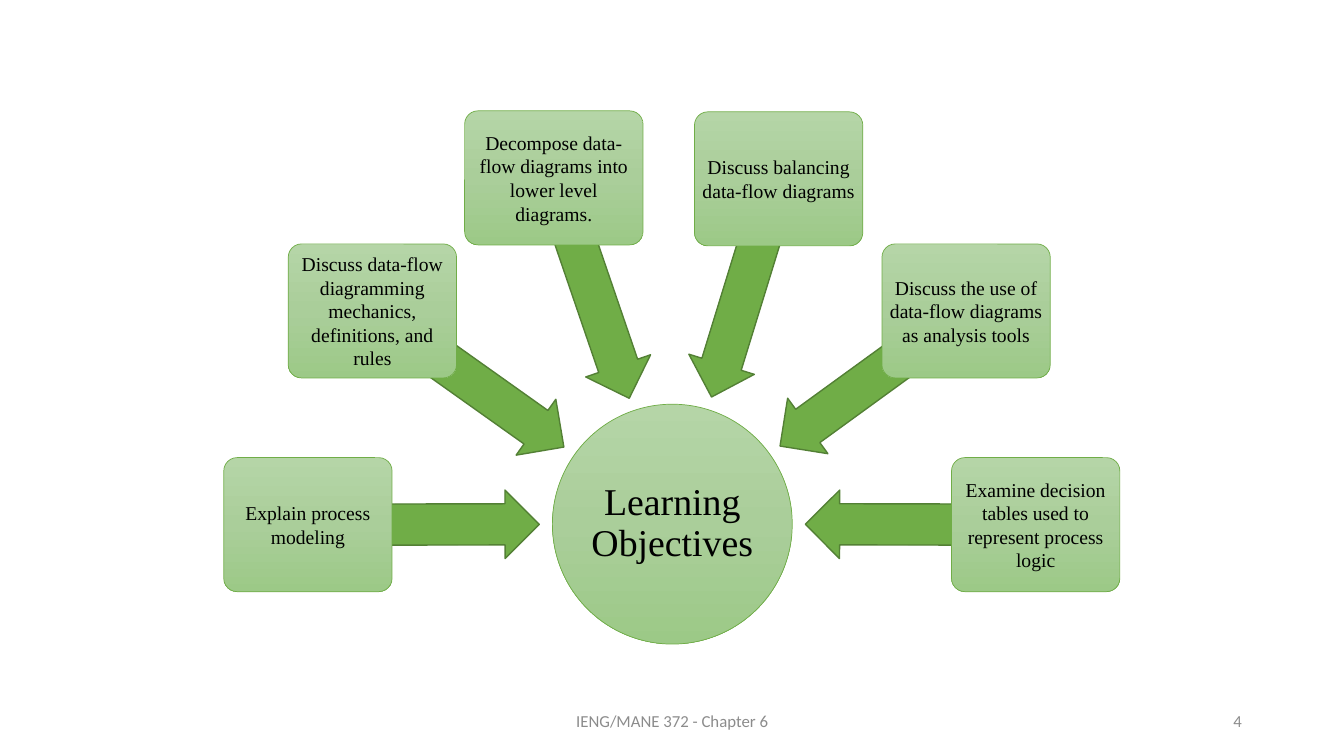
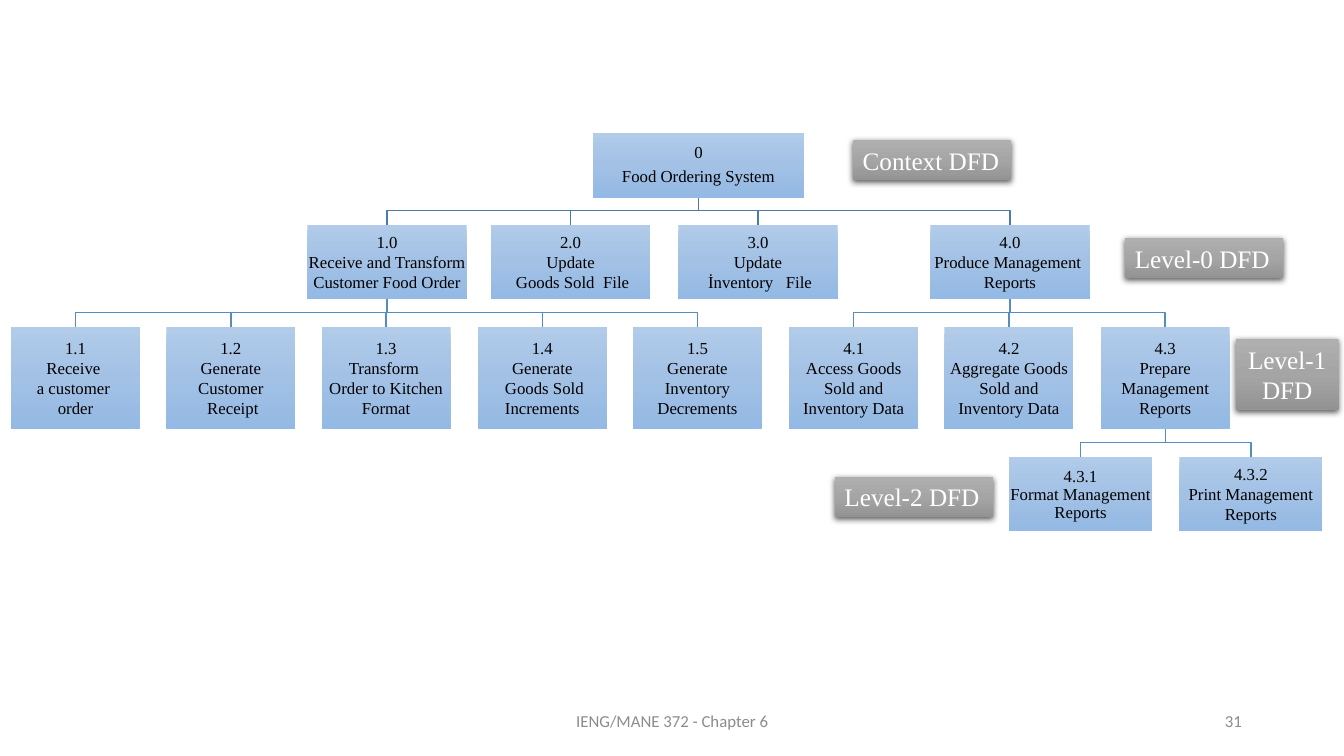
from copy import deepcopy
from dataclasses import dataclass
from math import atan2, degrees, hypot

from lxml import etree
from pptx import Presentation
from pptx import util as u
from pptx.dml.color import RGBColor
from pptx.enum import shapes, text
from pptx.oxml.ns import qn

# Shared scale, fonts and colours
PX = 9144  # EMU per px, 100 px to the inch
SERIF, SANS = "Times New Roman", "Calibri"
BLACK, WHITE, FOOTER_GREY = "000000", "FFFFFF", "8C8C8C"
GREEN, DARK_GREEN = "70AD47", "538035"
GREEN_FADE = ("B5D5A7", "AACE9A", "9CC987")
BLUE_FADE = ("B1CBE9", "A3C1E5", "93B9E4")
GREY_FADE = ("AFAFAF", "A5A5A5", "939393")
LEFT, CENTER, RIGHT = text.PP_ALIGN.LEFT, text.PP_ALIGN.CENTER, text.PP_ALIGN.RIGHT
SHAPE = shapes.MSO_SHAPE


@dataclass
class Box:
    x: int
    y: int
    w: int
    h: int
    lines: str

    @property
    def center(self) -> tuple[float, float]:
        return self.x + self.w / 2, self.y + self.h / 2


@dataclass
class Node:
    x: int
    w: int
    level: int
    parent: str
    lines: str

    @property
    def mid(self) -> int:
        return self.x + self.w // 2

    @property
    def number(self) -> str:
        return self.lines.split("\n")[0]


# Drawing helpers
def px(n: float) -> u.Emu:
    return u.Emu(round(n * PX))


def color(value: str) -> RGBColor:
    return RGBColor.from_string(value)


def write(sp, lines: str, size: int, hue: str = BLACK, font: str = SERIF,
          align=CENTER, inset: int = 0) -> None:
    tf = sp.text_frame
    tf.text = lines
    tf.word_wrap = True
    tf.vertical_anchor = text.MSO_ANCHOR.MIDDLE
    tf.margin_left = tf.margin_right = tf.margin_top = tf.margin_bottom = px(inset)
    for p in tf.paragraphs:
        p.alignment = align
        for r in p.runs:
            r.font.size, r.font.name = u.Pt(size), font
            r.font.color.rgb = color(hue)


def fade(sp, hues: tuple[str, ...]) -> None:
    """Fill from top to bottom with three evenly spaced colours."""
    sp.fill.gradient()
    sp.fill.gradient_angle = 270
    stops = sp._element.spPr.find(qn("a:gradFill")).find(qn("a:gsLst"))
    stops.insert(1, deepcopy(stops[0]))
    for i, (stop, hue) in enumerate(zip(sp.fill.gradient_stops, hues)):
        stop.position = i / 2
        stop.color.rgb = color(hue)


def outline(sp, hue: str, width: float) -> None:
    sp.line.color.rgb = color(hue)
    sp.line.width = u.Pt(width)


def add_box(s, kind, box: Box, hues: tuple[str, ...], size: int,
            hue: str = BLACK, align=CENTER, inset: int = 1):
    sp = s.shapes.add_shape(kind, px(box.x), px(box.y), px(box.w), px(box.h))
    sp.shadow.inherit = False
    fade(sp, hues)
    sp.line.fill.background()
    write(sp, box.lines, size, hue, align=align, inset=inset)
    return sp


def add_slide(prs, number: int):
    s = prs.slides.add_slide(prs.slide_layouts[6])
    for x, w, label, align in ((442, 450, "IENG/MANE 372 - Chapter 6", CENTER),
                               (942, 300, str(number), RIGHT)):
        sp = s.shapes.add_textbox(px(x), px(695), px(w), px(40))
        write(sp, label, 12, FOOTER_GREY, SANS, align, inset=10)
    return s


# Learning objectives: boxes whose arrows point at the hub
HUB = Box(548, 401, 238, 238, "Learning Objectives")
ARROW_H, ARROW_GAP = 68, 13
OBJECTIVES = (
    Box(222, 454, 167, 133, "Explain process modeling"),
    Box(286, 242, 167, 133,
        "Discuss data-flow diagramming\nmechanics, definitions, and rules"),
    Box(461, 110, 177, 133, "Decompose data-flow diagrams into lower level diagrams."),
    Box(689, 111, 167, 133, "Discuss balancing data-flow diagrams"),
    Box(875, 242, 167, 133, "Discuss the use of data-flow diagrams\nas analysis tools"),
    Box(944, 454, 167, 133, "Examine decision tables used to represent process logic"),
)


def add_arrow(s, box: Box) -> None:
    """Run from the box centre towards the hub, stopping short of its edge."""
    (x, y), (hub_x, hub_y) = box.center, HUB.center
    dx, dy = hub_x - x, hub_y - y
    reach = hypot(dx, dy)
    length = reach - HUB.w / 2 - ARROW_GAP
    mid_x, mid_y = x + dx * length / reach / 2, y + dy * length / reach / 2
    sp = s.shapes.add_shape(SHAPE.LEFT_ARROW, px(mid_x - length / 2),
                            px(mid_y - ARROW_H / 2), px(length), px(ARROW_H))
    sp.adjustments[0], sp.adjustments[1] = 0.6, 0.5
    sp.rotation = round(degrees(atan2(dy, dx)) + 180, 1) % 360
    sp.shadow.inherit = False
    sp.fill.solid()
    sp.fill.fore_color.rgb = color(GREEN)
    outline(sp, DARK_GREEN, 1)


def build_objectives(prs) -> None:
    s = add_slide(prs, 4)
    sp = add_box(s, SHAPE.OVAL, HUB, GREEN_FADE, 27, inset=2)
    sp.text_frame.paragraphs[0].line_spacing = 0.9
    outline(sp, GREEN, 0.5)
    for box in OBJECTIVES:
        add_arrow(s, box)
        sp = add_box(s, SHAPE.ROUNDED_RECTANGLE, box, GREEN_FADE, 14, inset=3)
        sp.adjustments[0] = 0.1
        outline(sp, GREEN, 0.5)


# Decomposition tree: levels stacked with one gap
TOP, LEVEL_GAP = 132, 27
HEIGHTS = (64, 74, 102, 74)
LEVEL_TOPS = [TOP + sum(HEIGHTS[:i]) + i * LEVEL_GAP for i in range(len(HEIGHTS))]
BRANCH_COLORS = ("497CAB", "538DC1", "538DC1")
LEVEL_1 = (
    ("1.0", "1.1\nReceive \na customer \norder"),
    ("1.0", "1.2\nGenerate Customer\n Receipt"),
    ("1.0", "1.3\nTransform \nOrder to Kitchen Format"),
    ("1.0", "1.4\nGenerate\n Goods Sold Increments"),
    ("1.0", "1.5\nGenerate Inventory Decrements"),
    ("4.0", "4.1\nAccess Goods Sold and Inventory Data"),
    ("4.0", "4.2\nAggregate Goods Sold and Inventory Data"),
    ("4.0", "4.3\nPrepare Management Reports"),
)
NODES = (
    Node(588, 210, 0, "", "0\nFood Ordering System"),
    Node(305, 158, 1, "0", "1.0\nReceive and Transform Customer Food Order"),
    Node(487, 158, 1, "0", "2.0\nUpdate\n Goods Sold  File"),
    Node(673, 158, 1, "0", "3.0\nUpdate\n İnventory   File"),
    Node(923, 158, 1, "0", "4.0\nProduce Management \nReports"),
    *(Node(11 + i * 1081 // 7, 128, 2, parent, lines)
      for i, (parent, lines) in enumerate(LEVEL_1)),
    Node(1001, 142, 3, "4.3", "4.3.1\nFormat Management Reports"),
    Node(1170, 142, 3, "4.3", "4.3.2\nPrint Management Reports"),
)
TAGS = (
    Box(846, 139, 157, 40, "Context DFD"),
    Box(1116, 236, 157, 40, "Level-0 DFD"),
    Box(1226, 336, 102, 71, "Level-1 DFD"),
    Box(828, 473, 157, 40, "Level-2 DFD"),
)


def add_branches(s, node: Node) -> None:
    """Draw one elbow from the node down to each of its children."""
    bottom = LEVEL_TOPS[node.level] + HEIGHTS[node.level]
    bend = bottom + LEVEL_GAP // 2
    for child in NODES:
        if child.parent != node.number:
            continue
        elbow = s.shapes.build_freeform(node.mid, bottom, scale=PX)
        elbow.add_line_segments(((node.mid, bend), (child.mid, bend),
                                 (child.mid, bottom + LEVEL_GAP)), close=False)
        sp = elbow.convert_to_shape()
        sp.shadow.inherit = False
        sp.fill.background()
        outline(sp, BRANCH_COLORS[node.level], 1)


def add_node(s, node: Node) -> None:
    box = Box(node.x, LEVEL_TOPS[node.level], node.w, HEIGHTS[node.level], node.lines)
    sp = add_box(s, SHAPE.RECTANGLE, box, BLUE_FADE, 12)
    paragraphs = sp.text_frame.paragraphs
    if node.number == "0":
        for p in paragraphs:
            p.line_spacing, p.space_after = 0.9, u.Pt(4)
    elif node.number == "4.3.1":
        paragraphs[1].line_spacing = 0.9


def add_tag(s, tag: Box) -> None:
    align = CENTER if tag.h > 40 else LEFT  # the tall tag holds two lines
    sp = add_box(s, SHAPE.RECTANGLE, tag, GREY_FADE, 18, WHITE, align, inset=10)
    sp.text_frame.margin_top = sp.text_frame.margin_bottom = px(5)
    effects = sp._element.spPr.find(qn("a:effectLst"))
    shadow = etree.SubElement(effects, qn("a:outerShdw"), blurRad=str(u.Pt(4.5)),
                              dist=str(u.Pt(1.5)), dir="5400000", algn="ctr",
                              rotWithShape="0")
    hue = etree.SubElement(shadow, qn("a:srgbClr"), val=BLACK)
    etree.SubElement(hue, qn("a:alpha"), val="63000")


def build_decomposition(prs) -> None:
    s = add_slide(prs, 31)
    for node in NODES:
        add_branches(s, node)
    for node in NODES:
        add_node(s, node)
    for tag in TAGS:
        add_tag(s, tag)


def main() -> None:
    prs = Presentation()
    prs.slide_width, prs.slide_height = px(4000 / 3), px(750)
    build_objectives(prs)
    build_decomposition(prs)
    prs.save("out.pptx")


if __name__ == "__main__":
    main()
